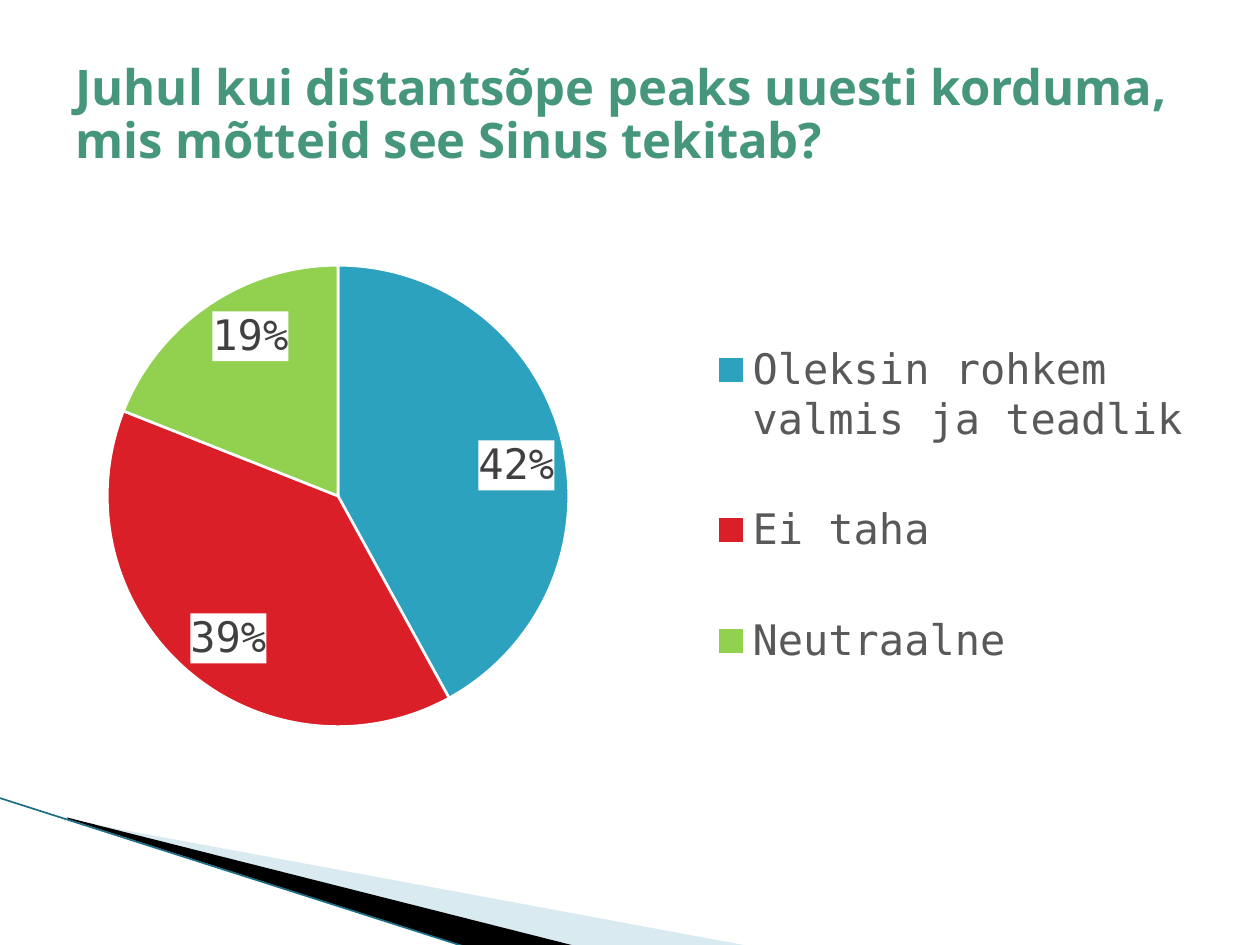
from dataclasses import dataclass

from lxml import etree
from pptx import Presentation
from pptx.chart.data import CategoryChartData
from pptx.dml.color import RGBColor
from pptx.enum.chart import XL_CHART_TYPE, XL_LABEL_POSITION, XL_LEGEND_POSITION
from pptx.enum.shapes import MSO_CONNECTOR
from pptx.enum.text import MSO_ANCHOR
from pptx.oxml import parse_xml
from pptx.oxml.ns import nsdecls, qn
from pptx.util import Cm, Pt

PIE = XL_CHART_TYPE.PIE
RIGHT = XL_LEGEND_POSITION.RIGHT
INSIDE = XL_LABEL_POSITION.INSIDE_END
STRAIGHT = MSO_CONNECTOR.STRAIGHT
MIDDLE = MSO_ANCHOR.MIDDLE


@dataclass(frozen=True)
class Theme:
    head: str = "45967D"
    pale: str = "A0CBDC"
    dark: str = "000000"
    edge: str = "1B6E84"
    white: str = "FFFFFF"
    label: str = "404040"
    legend: str = "595959"
    slices: tuple = ("2DA2BF", "DA1F28", "92D050")
    title_font: str = "Open Sans"
    chart_font: str = "DejaVu Sans Mono"
    title_size: int = 28
    chart_size: int = 24
    base_size: int = 10


THEME = Theme()


def rgb(code):
    return RGBColor.from_string(code)


def style(font, name, size, color, bold=False):
    font.name = name
    font.size = Pt(size)
    font.color.rgb = rgb(color)
    font.bold = bold


def add_wedge(slide, points, color, alpha=None):
    start, *rest = [(Cm(x), Cm(y)) for x, y in points]
    pen = slide.shapes.build_freeform(*start)
    pen.add_line_segments(rest, close=True)
    shape = pen.convert_to_shape()
    shape.shadow.inherit = False
    shape.fill.solid()
    shape.fill.fore_color.rgb = rgb(color)
    shape.line.fill.background()
    if alpha:
        tint = shape.fill._xPr.find(".//" + qn("a:srgbClr"))
        etree.SubElement(tint, qn("a:alpha"), val=str(alpha * 1000))


def add_edge(slide, x1, y1, x2, y2):
    line = slide.shapes.add_connector(STRAIGHT, Cm(x1), Cm(y1), Cm(x2), Cm(y2))
    line.line.color.rgb = rgb(THEME.edge)
    line.line.width = Pt(0.95)
    etree.SubElement(line._element.spPr, qn("a:effectLst"))


def add_title(slide, text):
    box = slide.shapes.add_textbox(Cm(1.27), Cm(0.76), Cm(22.86), Cm(3.18))
    frame = box.text_frame
    frame.word_wrap = True
    frame.vertical_anchor = MIDDLE
    frame.text = text
    para = frame.paragraphs[0]
    para.line_spacing = 0.9
    style(para.runs[0].font, THEME.title_font, THEME.title_size, THEME.head, True)


def make_layout(x, y, w, h, inner=False):
    target = '<c:layoutTarget val="inner"/>' if inner else ""
    return parse_xml(
        f'<c:layout {nsdecls("c")}><c:manualLayout>{target}'
        '<c:xMode val="edge"/><c:yMode val="edge"/>'
        f'<c:x val="{x}"/><c:y val="{y}"/><c:w val="{w}"/><c:h val="{h}"/>'
        "</c:manualLayout></c:layout>"
    )


def set_layout(owner, layout, after=None):
    for old in owner.findall(qn("c:layout")):
        owner.remove(old)
    if after is None:
        owner.insert(0, layout)
    else:
        after.addnext(layout)


def set_labels(plot):
    plot.has_data_labels = True
    labels = plot.data_labels
    labels.show_value = True
    labels.show_percentage = False
    labels.number_format = "0%"
    labels.number_format_is_linked = False
    labels.position = INSIDE
    style(labels.font, THEME.chart_font, THEME.chart_size, THEME.label)
    fill = parse_xml(
        f'<c:spPr {nsdecls("c", "a")}><a:solidFill>'
        f'<a:srgbClr val="{THEME.white}"/></a:solidFill></c:spPr>'
    )
    labels._element.find(qn("c:numFmt")).addnext(fill)


def set_legend(chart):
    chart.has_legend = True
    legend = chart.legend
    legend.position = RIGHT
    legend.include_in_layout = False
    style(legend.font, THEME.chart_font, THEME.chart_size, THEME.legend)
    root = legend._element
    set_layout(root, make_layout(0.52, 0.08, 0.47, 0.71), root.find(qn("c:legendPos")))


def add_pie(slide, names, values):
    data = CategoryChartData(number_format="0%")
    data.categories = names
    data.add_series("Series 1", values)
    frame = slide.shapes.add_chart(PIE, Cm(1.9), Cm(4.72), Cm(22.86), Cm(12.57), data)
    chart = frame.chart
    chart.has_title = False
    style(chart.font, THEME.chart_font, THEME.base_size, THEME.dark)
    plot = chart.plots[0]
    plot.vary_by_categories = True
    for index, color in enumerate(THEME.slices):
        form = plot.series[0].points[index].format
        form.fill.solid()
        form.fill.fore_color.rgb = rgb(color)
        form.line.color.rgb = rgb(THEME.white)
        form.line.width = Pt(1.5)
    set_labels(plot)
    set_legend(chart)
    area = chart._chartSpace.find(".//" + qn("c:plotArea"))
    set_layout(area, make_layout(0.01, 0.05, 0.41, 0.74, True))


def main():
    deck = Presentation()
    deck.slide_width, deck.slide_height = Cm(25.4), Cm(19.05)
    slide = deck.slides.add_slide(deck.slide_layouts[6])
    add_wedge(slide, [(1.4, 16.53), (15.1, 19.07), (11.58, 19.07), (1.4, 16.5)],
              THEME.pale, 40)
    add_wedge(slide, [(1.35, 16.48), (11.6, 19.07), (9.45, 19.1), (1.37, 16.51)],
              THEME.dark)
    add_edge(slide, -0.03, 16.08, 9.42, 19.1)
    add_pie(slide, ["Oleksin rohkem valmis ja teadlik", "Ei taha", "Neutraalne"],
            [0.42, 0.39, 0.19])
    add_title(slide, "Juhul kui distantsõpe peaks uuesti korduma, "
                     "mis mõtteid see Sinus tekitab?")
    deck.save("out.pptx")


if __name__ == "__main__":
    main()
